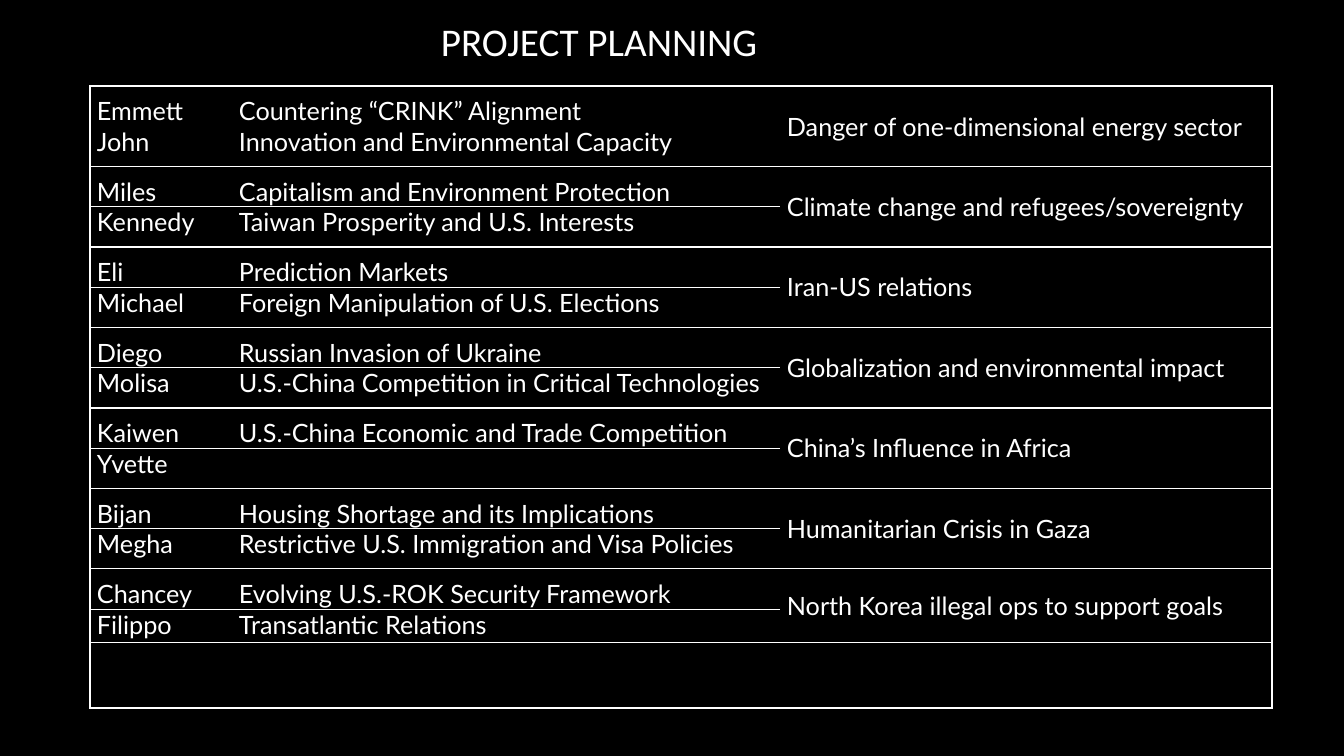
from pptx import Presentation
from pptx.dml.color import RGBColor
from pptx.enum.text import MSO_ANCHOR, MSO_AUTO_SIZE
from pptx.oxml.ns import qn
from pptx.util import Emu, Pt
from lxml.etree import SubElement

TITLE = "PROJECT PLANNING"
# Each team: two (name, topic) pairs and the shared topic
TEAMS = [
    (("Emmett", "Countering “CRINK” Alignment"),
     ("John", "Innovation and Environmental Capacity"),
     "Danger of one-dimensional energy sector"),
    (("Miles", "Capitalism and Environment Protection"),
     ("Kennedy", "Taiwan Prosperity and U.S. Interests"),
     "Climate change and refugees/sovereignty"),
    (("Eli", "Prediction Markets"),
     ("Michael", "Foreign Manipulation of U.S. Elections"),
     "Iran-US relations"),
    (("Diego", "Russian Invasion of Ukraine"),
     ("Molisa", "U.S.-China Competition in Critical Technologies"),
     "Globalization and environmental impact"),
    (("Kaiwen", "U.S.-China Economic and Trade Competition"),
     ("Yvette", ""),
     "China’s Influence in Africa"),
    (("Bijan", "Housing Shortage and its Implications"),
     ("Megha", "Restrictive U.S. Immigration and Visa Policies"),
     "Humanitarian Crisis in Gaza"),
    (("Chancey", "Evolving U.S.-ROK Security Framework"),
     ("Filippo", "Transatlantic Relations"),
     "North Korea illegal ops to support goals"),
    (("", ""), ("", ""), ""),
    (("", ""), ("", ""), ""),
]
RULED_ROWS = 16
LAST_NAMED_ROW = 13

BLACK = RGBColor(0x00, 0x00, 0x00)
WHITE = RGBColor(0xFF, 0xFF, 0xFF)
NO_STYLE = "{2D5ABB26-0587-4C30-8999-92F81FD0307C}"

COLUMN_WIDTHS = (142, 548, 492)
TALL_ROW, SHORT_ROW = 40, 33
SIDE_MARGIN, OUTER_MARGIN = 7, 10


def px(length):
    return Emu(round(length * 914400 / 100.8))


def set_borders(cell, ruled_sides):
    properties = cell._tc.get_or_add_tcPr()
    for side in "LRTB":
        line = SubElement(properties, qn(f"a:ln{side}"), w=str(Pt(1)))
        if side in ruled_sides:
            fill = SubElement(line, qn("a:solidFill"))
            SubElement(fill, qn("a:srgbClr"), val=str(WHITE))
        else:
            SubElement(line, qn("a:noFill"))


def is_ruled(boundary, column):
    """Tell whether a line runs along the top of row number boundary."""
    if boundary > RULED_ROWS:
        return False
    if boundary % 2 == 0:
        return True
    return column < 2 and 1 < boundary < LAST_NAMED_ROW + 1


def format_cell(cell, row, column):
    bottom = row + cell.span_height if cell.is_merge_origin else row + 1
    sides = {
        "L": column == 0 and row < RULED_ROWS,
        "R": column == 2 and row < RULED_ROWS,
        "T": is_ruled(row, column),
        "B": is_ruled(bottom, column),
    }
    set_borders(cell, [side for side, ruled in sides.items() if ruled])
    cell.fill.background()

    upper = row % 2 == 0
    padded = column == 0 and row < LAST_NAMED_ROW
    cell.margin_left = cell.margin_right = px(SIDE_MARGIN)
    cell.margin_top = px(OUTER_MARGIN if padded and upper else 0)
    cell.margin_bottom = px(OUTER_MARGIN if padded and not upper else 0)
    if column == 2:
        cell.vertical_anchor = MSO_ANCHOR.MIDDLE
    else:
        cell.vertical_anchor = MSO_ANCHOR.BOTTOM if upper else MSO_ANCHOR.TOP


def style_text(text_frame, font_name, size):
    for paragraph in text_frame.paragraphs:
        for run in paragraph.runs:
            run.font.name = font_name
            run.font.size = Pt(size)
            run.font.color.rgb = WHITE


def add_title(slide):
    box = slide.shapes.add_textbox(px(431), px(12), px(372), px(58))
    frame = box.text_frame
    frame.text = TITLE
    frame.word_wrap = False
    frame.auto_size = MSO_AUTO_SIZE.SHAPE_TO_FIT_TEXT
    style_text(frame, "Calibri", 28)


def add_planning_table(slide):
    row_count = 2 * len(TEAMS)
    heights = [TALL_ROW if row < LAST_NAMED_ROW else SHORT_ROW
               for row in range(row_count)]
    frame = slide.shapes.add_table(row_count, len(COLUMN_WIDTHS), px(90), px(86),
                                   px(sum(COLUMN_WIDTHS)), px(sum(heights)))
    table = frame.table
    table.first_row = table.horz_banding = False
    table._tbl.tblPr.find(qn("a:tableStyleId")).text = NO_STYLE
    for column, width in zip(table.columns, COLUMN_WIDTHS):
        column.width = px(width)
    for row, height in zip(table.rows, heights):
        row.height = px(height)

    for team, (first, second, shared_topic) in enumerate(TEAMS):
        top = 2 * team
        table.cell(top, 2).merge(table.cell(top + 1, 2))
        for row, texts in ((top, (*first, shared_topic)), (top + 1, (*second, ""))):
            for column, text in enumerate(texts):
                cell = table.cell(row, column)
                format_cell(cell, row, column)
                if text:
                    cell.text_frame.text = text
                    style_text(cell.text_frame, "Lato", 18)


def main():
    presentation = Presentation()
    presentation.slide_width = px(1344)
    presentation.slide_height = px(756)
    slide = presentation.slides.add_slide(presentation.slide_layouts[6])
    slide.background.fill.solid()
    slide.background.fill.fore_color.rgb = BLACK
    add_planning_table(slide)
    add_title(slide)
    presentation.save("out.pptx")


if __name__ == "__main__":
    main()
